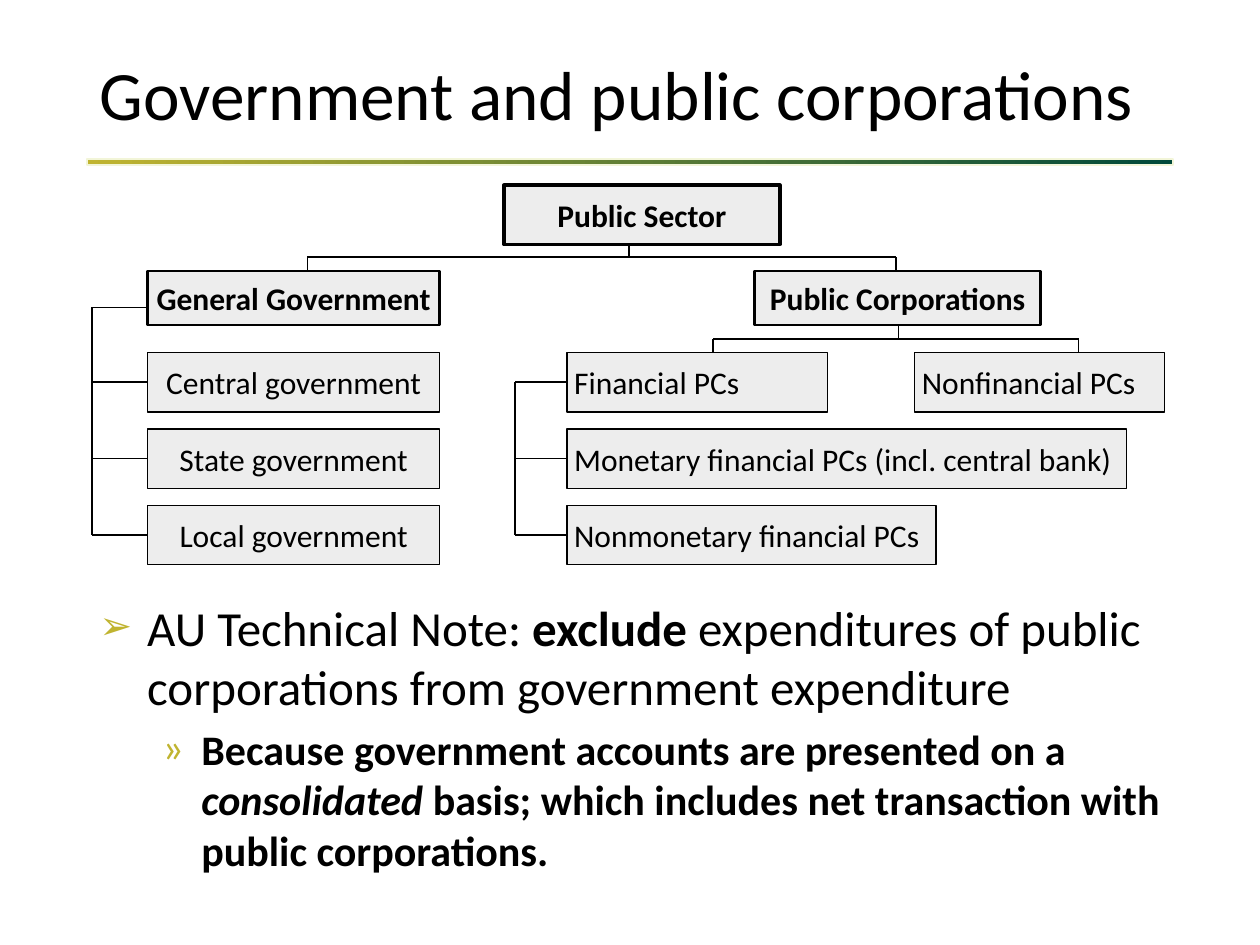
import pptx
import pptx.util
import pptx.dml.color
import pptx.enum.shapes
import pptx.enum.text
import pptx.oxml.ns
import lxml.etree

RGB = pptx.dml.color.RGBColor
Pt = pptx.util.Pt
SHAPE = pptx.enum.shapes.MSO_SHAPE.RECTANGLE
LINE = pptx.enum.shapes.MSO_CONNECTOR.STRAIGHT
ALIGN = pptx.enum.text.PP_ALIGN
MIDDLE = pptx.enum.text.MSO_ANCHOR.MIDDLE
qn = pptx.oxml.ns.qn

BLACK = RGB(0, 0, 0)
GREY = RGB(0xED, 0xED, 0xED)
GOLD = RGB(0xC0, 0xB4, 0x30)
GREEN = RGB(0x00, 0x49, 0x3A)
PALE = RGB(0xF2, 0xF5, 0xD8)
FONT = "Calibri"
COLS, ROWS = 100, 75


def cell(count):
    return pptx.util.Inches(count * 10 / COLS)


def style(font, size, bold=None):
    font.name, font.size, font.bold = FONT, Pt(size), bold
    font.color.rgb = BLACK


def rect(slide, x, y, wide, high, edge, weight):
    shape = slide.shapes.add_shape(SHAPE, *map(cell, (x, y, wide, high)))
    shape.shadow.inherit = False
    shape.line.color.rgb = edge
    shape.line.width = Pt(weight)
    return shape


def node(slide, x, y, wide, high, text, weight=0.75, bold=False, left=False):
    shape = rect(slide, x, y, wide, high, BLACK, weight)
    shape.fill.solid()
    shape.fill.fore_color.rgb = GREY
    frame = shape.text_frame
    frame.margin_left = cell(0.57 if left else 0)
    frame.margin_right = frame.margin_top = frame.margin_bottom = 0
    frame.vertical_anchor = MIDDLE
    para = frame.paragraphs[0]
    para.text = text
    para.alignment = ALIGN.LEFT if left else ALIGN.CENTER
    style(para.font, 18, bold)


def wire(slide, x1, y1, x2, y2):
    line = slide.shapes.add_connector(LINE, *map(cell, (x1, y1, x2, y2)))
    line.line.color.rgb = BLACK
    line.line.width = Pt(1)
    lxml.etree.SubElement(line._element.spPr, qn("a:effectLst"))


def fork(slide, stem, top, mid, low, ends):
    wire(slide, stem, top, stem, mid)
    wire(slide, ends[0], mid, ends[1], mid)
    for end in ends:
        wire(slide, end, mid, end, low)


def comb(slide, x, wide, rows):
    wire(slide, x, rows[0], x, rows[-1])
    for row in rows:
        wire(slide, x, row, x + wide, row)


def head(slide, x, y, wide):
    title = slide.shapes.title
    title.left, title.top, title.width, title.height = map(cell, (x, y, wide, 8.2))
    frame = title.text_frame
    frame.text = "Government and public corporations"
    frame.vertical_anchor = MIDDLE
    frame.auto_size = pptx.enum.text.MSO_AUTO_SIZE.NONE
    para = frame.paragraphs[0]
    para.alignment = ALIGN.LEFT
    para.line_spacing = 0.9
    style(para.font, 39.6)
    bar = rect(slide, x, y + 8.9, wide, 0.5, PALE, 1)
    bar.fill.gradient()
    bar.fill.gradient_angle = 0
    for stop, color, place in zip(bar.fill.gradient_stops, (GOLD, GREEN), (0, 1)):
        stop.color.rgb = color
        stop.position = place


def tree(slide, x, y):
    high, step = 4.7, 6.05
    tops = [y + 13.3 + step * i for i in range(3)]
    mids = [top + high / 2 for top in tops]
    left, right = x + 4.4, x + 37.7

    fork(slide, x + 42.6, y + high, y + 5.7, y + 6.8, (x + 17.1, x + 63.8))
    fork(slide, x + 64, y + 11.1, y + 12.2, y + 13.4, (x + 49.3, x + 78.3))
    comb(slide, x, 4.4, [y + 9.7] + mids)
    comb(slide, x + 33.6, 4.1, mids)

    node(slide, x + 32.7, y, 21.9, high, "Public Sector", 2, True)
    node(slide, left, y + 6.8, 23.2, 4.3, "General Government", 1.5, True)
    node(slide, x + 52.6, y + 6.8, 22.7, 4.3, "Public Corporations", 1.5, True)
    for top, name in zip(tops, ("Central", "State", "Local")):
        node(slide, left, top, 23.2, high, name + " government")
    firms = (
        ("Financial PCs", 20.7),
        ("Monetary financial PCs (incl. central bank)", 44.4),
        ("Nonmonetary financial PCs", 29.3),
    )
    for top, (name, wide) in zip(tops, firms):
        node(slide, right, top, wide, high, name, left=True)
    node(slide, x + 65.3, tops[0], 19.8, high, "Nonfinancial PCs", left=True)


def point(para, level, mark, scale, indent, hang, size, runs):
    para.level = level
    props = para._p.get_or_add_pPr()
    props.set("marL", str(cell(indent)))
    props.set("indent", str(-cell(hang)))
    color = lxml.etree.SubElement(props, qn("a:buClr"))
    lxml.etree.SubElement(color, qn("a:srgbClr"), val=str(GOLD))
    lxml.etree.SubElement(props, qn("a:buSzPct"), val=str(scale * 1000))
    lxml.etree.SubElement(props, qn("a:buFont"), typeface=FONT)
    lxml.etree.SubElement(props, qn("a:buChar"), char=mark)
    style(para.font, size)
    for text, bold, slant in runs:
        run = para.add_run()
        run.text = text
        run.font.bold, run.font.italic = bold, slant


def notes(slide, x, y, wide, high):
    frame = slide.shapes.add_textbox(*map(cell, (x, y, wide, high))).text_frame
    frame.word_wrap = True
    point(frame.paragraphs[0], 0, "➢", 80, 3.8, 3.8, 28, (
        ("AU Technical Note: ", False, False),
        ("exclude", True, False),
        (" expenditures of public corporations from government expenditure", False, False),
    ))
    para = frame.add_paragraph()
    point(para, 1, "»", 100, 8.1, 3.1, 24, (
        ("Because government accounts are presented on a ", True, False),
        ("consolidated ", True, True),
        ("basis; which includes net transaction with public corporations.", True, False),
    ))
    para.space_before = Pt(4.8)


def main():
    deck = pptx.Presentation()
    deck.slide_width, deck.slide_height = cell(COLS), cell(ROWS)
    slide = deck.slides.add_slide(deck.slide_layouts[5])
    head(slide, 6.9, 3.7, 86.2)
    tree(slide, 7.3, 14.7)
    notes(slide, 6.9, 46.9, 86.2, 17.9)
    deck.save("out.pptx")


if __name__ == "__main__":
    main()
